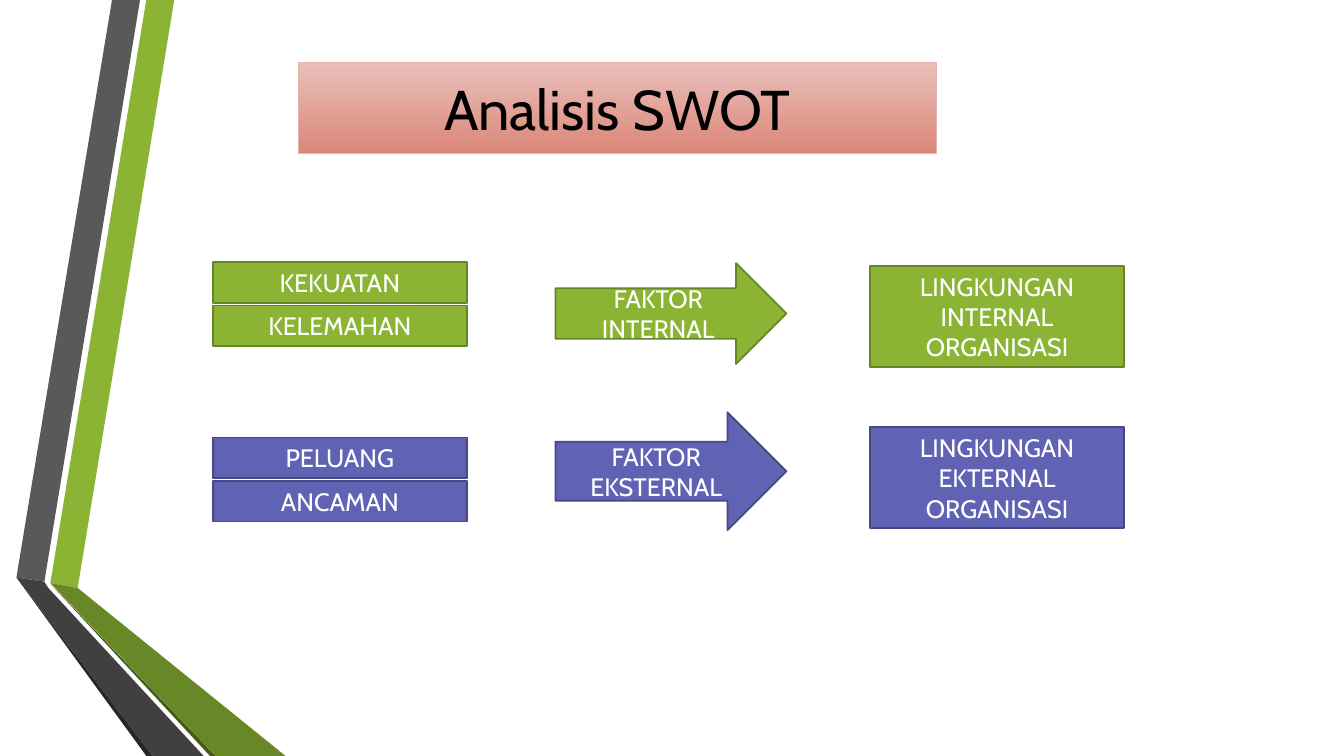
from pptx import Presentation
from pptx.dml.color import RGBColor
from pptx.enum.shapes import MSO_SHAPE
from pptx.enum.text import MSO_ANCHOR, PP_ALIGN
from pptx.util import Pt

FONT = "Cabin"
BLACK = RGBColor(0x00, 0x00, 0x00)
WHITE = RGBColor(0xFF, 0xFF, 0xFF)
GREEN = RGBColor(0x8B, 0xB4, 0x34)
GREEN_LINE = RGBColor(0x67, 0x85, 0x26)
GREEN_DARK = RGBColor(0x68, 0x87, 0x27)
GREEN_DEEP = RGBColor(0x46, 0x5A, 0x1A)
VIOLET = RGBColor(0x60, 0x63, 0xB4)
VIOLET_LINE = RGBColor(0x47, 0x49, 0x85)
GREY = RGBColor(0x59, 0x59, 0x59)
GREY_DARK = RGBColor(0x40, 0x40, 0x40)
GREY_DEEP = RGBColor(0x26, 0x26, 0x26)
ROSE_LIGHT = RGBColor(0xEA, 0xC0, 0xBA)
ROSE = RGBColor(0xDB, 0x87, 0x79)
ROSE_LINE = RGBColor(0xE6, 0xB4, 0xAE)

RIBBONS = [
    (GREEN, [(36, 416.5), (55.5, 420), (124.5, 0), (104.5, 0)]),
    (GREY, [(100, 0), (80, 0), (11.7, 412.5), (31.7, 415.5)]),
    (GREY_DEEP, [(11.7, 412.5), (104.5, 540), (109, 540)]),
    (GREEN_DEEP, [(36, 417), (150, 540), (154, 540)]),
    (GREEN_DARK, [(36, 416.5), (154, 540), (204, 540), (55.5, 420)]),
    (GREY_DARK, [(145.5, 540), (34.5, 420), (31.7, 415.5), (11.7, 412.5), (109, 540)]),
]

BOX_LEFT, ARROW_LEFT, RESULT_LEFT = 152, 396.7, 621.4
BOX_W, BOX_H, BOX_STEP = 181.5, 29, 31
ARROW_W, RESULT_H = 165, 72


def add_ribbon(slide, color, points):
    """Draw one filled polygon of the side decoration."""
    corners = [(Pt(x), Pt(y)) for x, y in points]
    builder = slide.shapes.build_freeform(*corners[0])
    builder.add_line_segments(corners[1:])
    sp = builder.convert_to_shape()
    sp.shadow.inherit = False
    sp.fill.solid()
    sp.fill.fore_color.rgb = color
    sp.line.fill.background()


def write(sp, text, size, color):
    """Put centred text into a shape."""
    tf = sp.text_frame
    tf.text = text
    tf.word_wrap = True
    tf.vertical_anchor = MSO_ANCHOR.MIDDLE
    p = tf.paragraphs[0]
    p.alignment = PP_ALIGN.CENTER
    font = p.runs[0].font
    font.name, font.size, font.color.rgb = FONT, Pt(size), color


def add_title(slide, text):
    """Place the title on its gradient panel."""
    sp = slide.shapes.title
    sp.left, sp.top, sp.width, sp.height = Pt(213), Pt(44.5), Pt(456), Pt(65)
    sp.fill.gradient()
    sp.fill.gradient_angle = 270
    for stop, color, position in zip(sp.fill.gradient_stops, (ROSE_LIGHT, ROSE), (0, 1)):
        stop.color.rgb = color
        stop.position = position
    sp.line.color.rgb = ROSE_LINE
    sp.line.width = Pt(0.75)
    write(sp, text, 40, BLACK)


def add_block(slide, kind, text, box, colors):
    """Add a filled, outlined shape with white text."""
    sp = slide.shapes.add_shape(kind, *(Pt(v) for v in box))
    sp.shadow.inherit = False
    sp.fill.solid()
    sp.fill.fore_color.rgb, sp.line.color.rgb = colors
    sp.line.width = Pt(1.25)
    write(sp, text, 18, WHITE)


def add_factor_row(slide, labels, factor, result, tops, arrow_h, colors):
    """Add two stacked boxes, the arrow and the resulting environment."""
    box_top, arrow_top, result_top = tops
    for i, label in enumerate(labels):
        box = (BOX_LEFT, box_top + i * BOX_STEP, BOX_W, BOX_H)
        add_block(slide, MSO_SHAPE.RECTANGLE, label, box, colors)
    arrow = (ARROW_LEFT, arrow_top, ARROW_W, arrow_h)
    add_block(slide, MSO_SHAPE.RIGHT_ARROW, factor, arrow, colors)
    target = (RESULT_LEFT, result_top, BOX_W, RESULT_H)
    add_block(slide, MSO_SHAPE.RECTANGLE, result, target, colors)


def main():
    """Build the SWOT slide and save it."""
    prs = Presentation()
    prs.slide_width, prs.slide_height = Pt(960), Pt(540)
    slide = prs.slides.add_slide(prs.slide_layouts[5])
    for color, points in RIBBONS:
        add_ribbon(slide, color, points)
    add_title(slide, "Analisis SWOT")
    add_factor_row(slide, ["KEKUATAN", "KELEMAHAN"], "FAKTOR INTERNAL",
                   "LINGKUNGAN INTERNAL ORGANISASI",
                   (187.2, 188, 190), 72, (GREEN, GREEN_LINE))
    add_factor_row(slide, ["PELUANG", "ANCAMAN"], "FAKTOR EKSTERNAL",
                   "LINGKUNGAN EKTERNAL ORGANISASI",
                   (312.5, 294.5, 305.3), 84.2, (VIOLET, VIOLET_LINE))
    prs.save("out.pptx")


if __name__ == "__main__":
    main()
